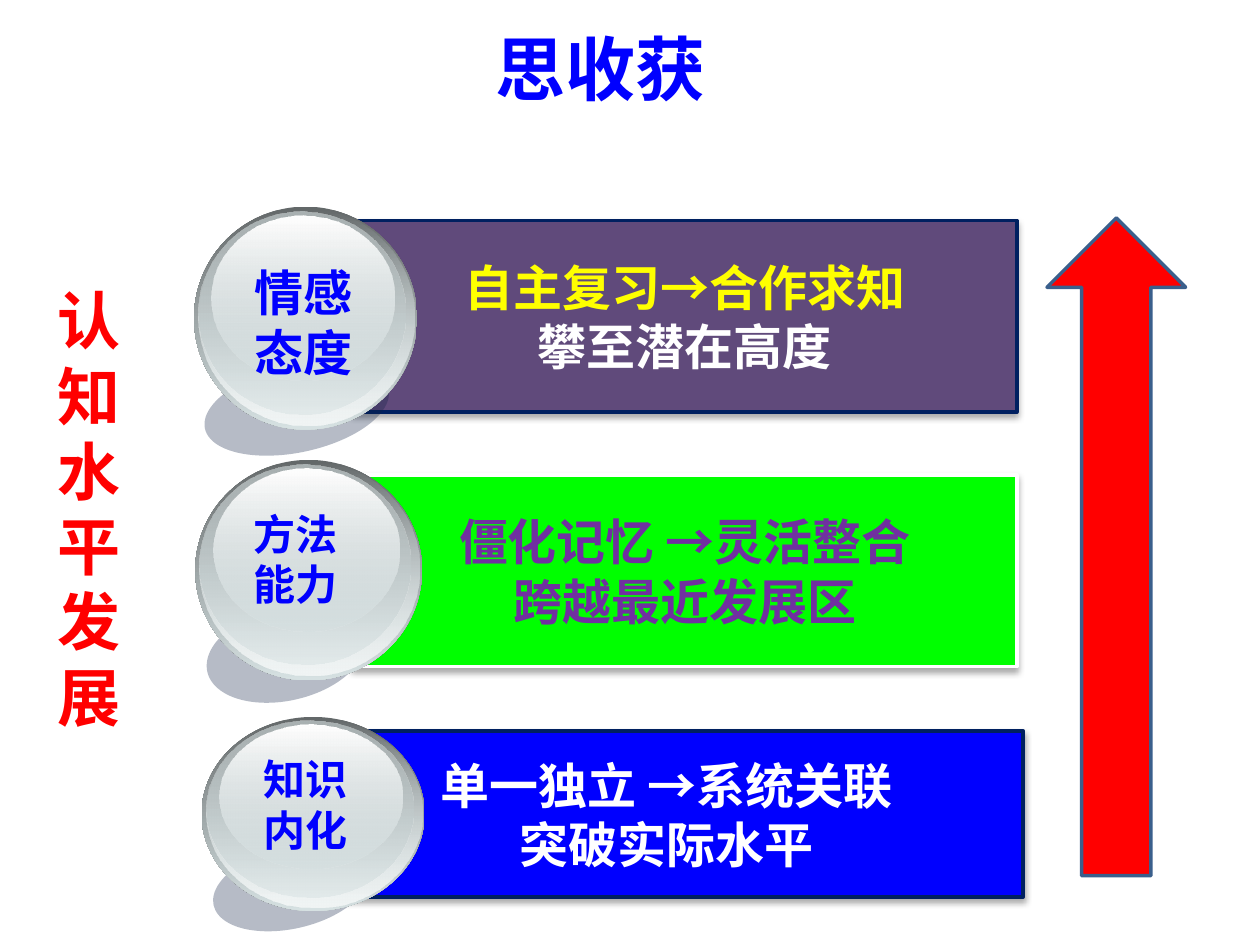
from lxml import etree
from pptx import Presentation
from pptx.dml.color import RGBColor
from pptx.enum.shapes import MSO_SHAPE
from pptx.enum.text import MSO_ANCHOR, PP_ALIGN
from pptx.oxml import parse_xml
from pptx.oxml.ns import nsdecls, qn
from pptx.util import Inches, Pt

FONT = "Noto Sans CJK SC"
BLUE = RGBColor(0x00, 0x00, 0xFF)
RED = RGBColor(0xFF, 0x00, 0x00)
GREEN = RGBColor(0x00, 0xFF, 0x00)
WHITE = RGBColor(0xFF, 0xFF, 0xFF)
YELLOW = RGBColor(0xFF, 0xFF, 0x00)
PURPLE = RGBColor(0x70, 0x30, 0xA0)
PLUM = RGBColor(0x60, 0x4A, 0x7B)
NAVY = RGBColor(0x00, 0x20, 0x60)
STEEL = RGBColor(0x3A, 0x5F, 0x8C)
SHADE = RGBColor(0x0F, 0x21, 0x45)

# Content: the rows from bottom to top, boxes as left, top, width, height
ROWS = [
    dict(bar=(2.46, 5.8, 5.66, 1.32), fill=BLUE, line=NAVY,
         text=[("单一独立 →系统关联", WHITE), ("突破实际水平", WHITE)],
         disc=(1.6, 5.69, 1.77, 1.54), shade=(1.68, 6.72, 1.26, 0.65), turn=347.1,
         label=["知识", "内化"], box=(1.77, 5.93, 1.31, 0.91), size=24,
         align=PP_ALIGN.CENTER, wrap=True),
    dict(bar=(2.8, 3.77, 5.27, 1.52), fill=GREEN, line=WHITE,
         text=[("僵化记忆 →灵活整合", PURPLE), ("跨越最近发展区", PURPLE)],
         disc=(1.55, 3.65, 1.8, 1.75), shade=(1.63, 4.82, 1.28, 0.74), turn=347.1,
         label=["方法", "能力"], box=(1.91, 3.98, 1.01, 1.12), size=24,
         align=PP_ALIGN.LEFT, wrap=False),
    dict(bar=(2.8, 1.75, 5.27, 1.52), fill=PLUM, line=NAVY,
         text=[("自主复习→合作求知", YELLOW), ("攀至潜在高度", WHITE)],
         disc=(1.54, 1.64, 1.77, 1.77), shade=(1.61, 2.9, 1.49, 0.69), turn=347.9,
         label=["情感", "态度"], box=(1.92, 2.03, 0.99, 1.04), size=28,
         align=PP_ALIGN.LEFT, wrap=False),
]

# Glass layers: box as shares of the disc, then colour and opacity (%) at top and bottom
LAYERS = [
    ((0, 0, 1, 1), ("636869", 100), ("D6E1E2", 100)),
    ((0.02, 0.01, 0.97, 0.97), ("D6E1E2", 0), ("F1F5F5", 100)),
    ((0.02, 0.02, 0.93, 0.91), ("AAB2B3", 100), ("D6E1E2", 48)),
    ((0.08, 0.04, 0.82, 0.74), ("FFFFFF", 100), ("D6E1E2", 38)),
]


def write(frame, lines, size, align, anchor=MSO_ANCHOR.TOP, wrap=True):
    """Fill a text frame with (text, colour) lines."""
    frame.word_wrap = wrap
    frame.vertical_anchor = anchor
    for i, (text, color) in enumerate(lines):
        para = frame.paragraphs[0] if i == 0 else frame.add_paragraph()
        para.alignment = align
        para.line_spacing = Pt(round(size * 1.2))
        para.space_before = Pt(0)
        run = para.add_run()
        run.text = text
        font = run.font
        font.name, font.size, font.bold = FONT, Pt(size), True
        font.color.rgb = color
        east = etree.SubElement(run._r.get_or_add_rPr(), qn("a:ea"))
        east.set("typeface", FONT)


def draw(kind, box, fill=None, line=None, width=0):
    shape = slide.shapes.add_shape(kind, *map(Inches, box))
    shape.shadow.inherit = False
    if fill is not None:
        shape.fill.solid()
        shape.fill.fore_color.rgb = fill
    if line is None:
        shape.line.fill.background()
    else:
        shape.line.color.rgb = line
        shape.line.width = Pt(width)
    return shape


def blend(shape, *ends):
    """Give a shape a top-to-bottom gradient with opacity."""
    stops = "".join(
        f'<a:gs pos="{pos}"><a:srgbClr val="{color}">'
        f'<a:alpha val="{alpha * 1000}"/></a:srgbClr></a:gs>'
        for pos, (color, alpha) in zip((0, 100000), ends))
    grad = parse_xml(f'<a:gradFill {nsdecls("a")} rotWithShape="1"><a:gsLst>{stops}'
                     '</a:gsLst><a:lin ang="5400000" scaled="0"/></a:gradFill>')
    shape._element.spPr.find(qn("a:prstGeom")).addnext(grad)


def cast(shape):
    """Add a soft shadow below a bar."""
    shape._element.spPr.find(qn("a:effectLst")).append(parse_xml(
        f'<a:outerShdw {nsdecls("a")} blurRad="{Pt(3.5)}" dist="{Pt(2.2)}" dir="5400000" '
        'rotWithShape="0"><a:srgbClr val="000000"><a:alpha val="32000"/></a:srgbClr>'
        '</a:outerShdw>'))


deck = Presentation()
deck.slide_width, deck.slide_height = Inches(10), Inches(7.5)
slide = deck.slides.add_slide(deck.slide_layouts[5])

# Title
title = slide.shapes.title
title.left, title.top, title.width, title.height = map(Inches, (3.83, 0.15, 3.2, 0.77))
write(title.text_frame, [("思收获", BLUE)], 40, PP_ALIGN.LEFT)

# Side label and rising arrow
side = slide.shapes.add_textbox(*map(Inches, (0.36, 2.19, 0.7, 3.74)))
write(side.text_frame, [("认知水平发展", RED)], 36, PP_ALIGN.LEFT)
draw(MSO_SHAPE.UP_ARROW, (8.31, 1.73, 1.1, 5.22), RED, STEEL, 2)

# Rows: bar, shade, glass disc, label
for row in ROWS:
    bar = draw(MSO_SHAPE.RECTANGLE, row["bar"], row["fill"], row["line"], 2.25)
    cast(bar)
    write(bar.text_frame, row["text"], 28, PP_ALIGN.CENTER, MSO_ANCHOR.MIDDLE)

    shade = draw(MSO_SHAPE.OVAL, row["shade"], SHADE)
    shade.rotation = row["turn"]
    color = shade._element.spPr.find(qn("a:solidFill"))[0]
    etree.SubElement(color, qn("a:alpha")).set("val", "30000")

    x, y, w, h = row["disc"]
    for (dx, dy, sw, sh), top, end in LAYERS:
        blend(draw(MSO_SHAPE.OVAL, (x + dx * w, y + dy * h, sw * w, sh * h)), top, end)

    label = slide.shapes.add_textbox(*map(Inches, row["box"]))
    write(label.text_frame, [(text, BLUE) for text in row["label"]],
          row["size"], row["align"], wrap=row["wrap"])

deck.save("out.pptx")
